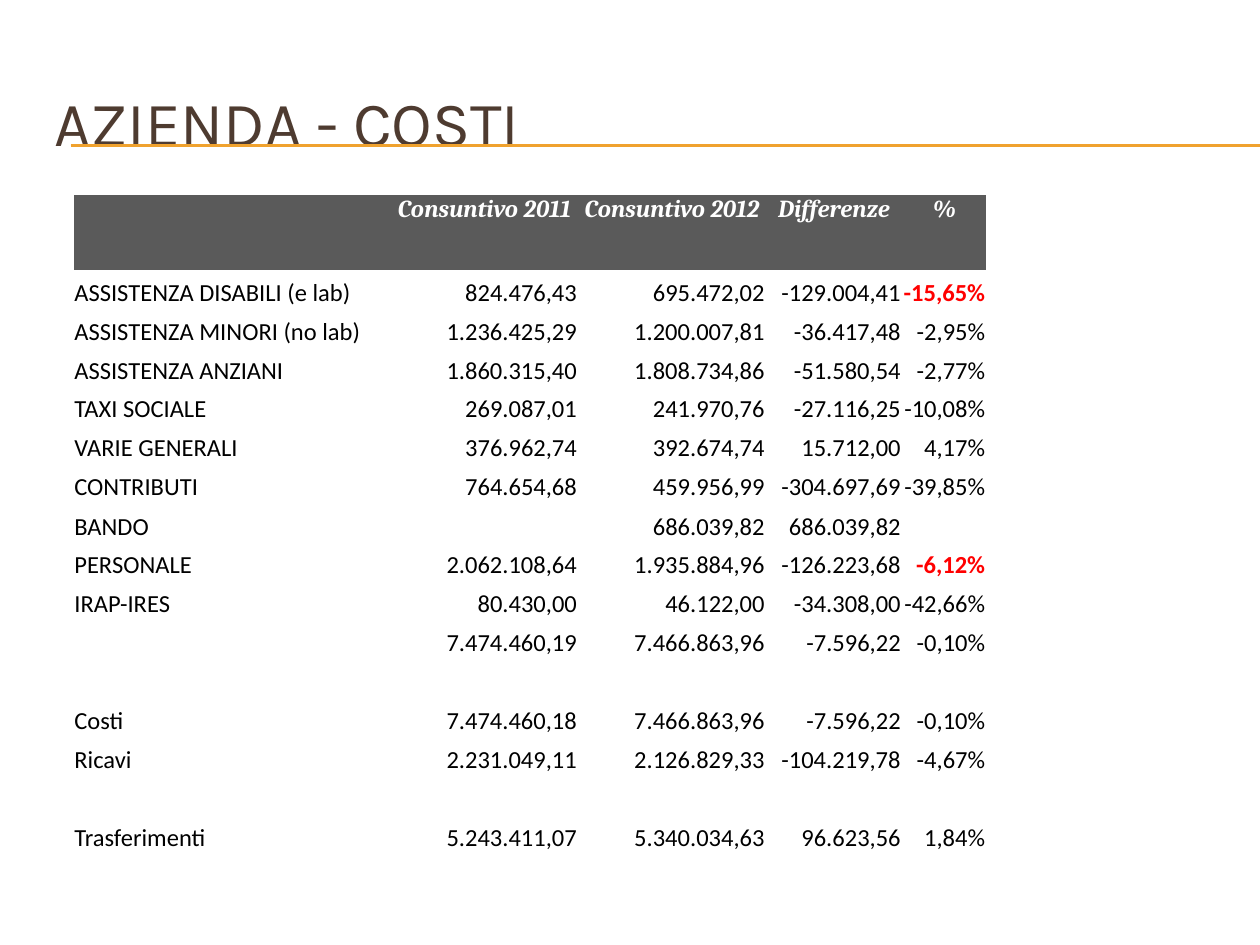
from lxml.etree import SubElement
from pptx import Presentation
from pptx.dml.color import RGBColor
from pptx.enum.shapes import MSO_CONNECTOR
from pptx.enum.text import MSO_ANCHOR as Anchor, PP_ALIGN as Align
from pptx.oxml.ns import qn
from pptx.util import Inches, Pt

BROWN = RGBColor(0x4E, 0x3B, 0x30)
ORANGE = RGBColor(0xF0, 0xA2, 0x2E)
GRAY = RGBColor(0x5A, 0x5A, 0x5A)
WHITE = RGBColor(0xFF, 0xFF, 0xFF)
BLACK = RGBColor(0, 0, 0)
RED = RGBColor(0xFF, 0, 0)

COLUMN_WIDTHS = [2.51, 1.49, 1.49, 1.08, 0.67]
TABLE_HEIGHT, HEADER_HEIGHT = 5.2, 0.59
HEADERS = ["", "Consuntivo 2011", "Consuntivo 2012", "Differenze", "%"]
COSTS = [
    ["ASSISTENZA DISABILI (e lab)", "824.476,43", "695.472,02", "-129.004,41", "-15,65%"],
    ["ASSISTENZA MINORI (no lab)", "1.236.425,29", "1.200.007,81", "-36.417,48", "-2,95%"],
    ["ASSISTENZA ANZIANI", "1.860.315,40", "1.808.734,86", "-51.580,54", "-2,77%"],
    ["TAXI SOCIALE", "269.087,01", "241.970,76", "-27.116,25", "-10,08%"],
    ["VARIE GENERALI", "376.962,74", "392.674,74", "15.712,00", "4,17%"],
    ["CONTRIBUTI", "764.654,68", "459.956,99", "-304.697,69", "-39,85%"],
    ["BANDO", "", "686.039,82", "686.039,82", ""],
    ["PERSONALE", "2.062.108,64", "1.935.884,96", "-126.223,68", "-6,12%"],
    ["IRAP-IRES", "80.430,00", "46.122,00", "-34.308,00", "-42,66%"],
    ["", "7.474.460,19", "7.466.863,96", "-7.596,22", "-0,10%"],
    [""] * 5,
    ["Costi", "7.474.460,18", "7.466.863,96", "-7.596,22", "-0,10%"],
    ["Ricavi", "2.231.049,11", "2.126.829,33", "-104.219,78", "-4,67%"],
    [""] * 5,
    ["Trasferimenti", "5.243.411,07", "5.340.034,63", "96.623,56", "1,84%"],
]
HIGHLIGHTS = {"-15,65%", "-6,12%"}


def write_text(frame, text, font="Calibri", size=14, color=BLACK,
               bold=False, italic=False, align=Align.LEFT):
    paragraph = frame.paragraphs[0]
    paragraph.alignment = align
    run = paragraph.add_run()
    run.text = text
    run.font.name = font
    run.font.size = Pt(size)
    run.font.color.rgb = color
    run.font.bold = bold
    run.font.italic = italic


def add_rule(slide, top, right):
    line = slide.shapes.add_connector(
        MSO_CONNECTOR.STRAIGHT, Inches(0.56), Inches(top), right, Inches(top))
    line.line.color.rgb = ORANGE
    line.line.width = Pt(0.75)
    SubElement(line._element.spPr, qn("a:effectLst"))


def add_title(slide, text):
    title = slide.shapes.title
    title.left, title.top = Inches(0.33), Inches(0.5)
    title.width, title.height = Inches(9.5), Inches(0.92)
    title.text_frame.vertical_anchor = Anchor.MIDDLE
    write_text(title.text_frame, text, font="Karla", size=36, color=BROWN)


def fill_cell(cell, text, is_header, is_label):
    inset = 0 if is_header or is_label else Inches(0.01)
    cell.margin_left = cell.margin_right = cell.margin_top = inset
    cell.margin_bottom = 0
    if is_header:
        cell.fill.solid()
        cell.fill.fore_color.rgb = GRAY
        style = dict(font="Cambria", color=WHITE, bold=True, italic=True, align=Align.CENTER)
    else:
        cell.fill.background()
        cell.vertical_anchor = Anchor.BOTTOM
        marked = text in HIGHLIGHTS
        style = dict(color=RED if marked else BLACK, bold=marked,
                     align=Align.LEFT if is_label else Align.RIGHT)
    if text:
        write_text(cell.text_frame, text, **style)


def add_cost_table(slide):
    rows = [HEADERS] + COSTS
    table = slide.shapes.add_table(
        len(rows), len(HEADERS), Inches(0.59), Inches(1.55),
        Inches(sum(COLUMN_WIDTHS)), Inches(TABLE_HEIGHT)).table
    table.horz_banding = False
    table.first_row = False
    for column, width in zip(table.columns, COLUMN_WIDTHS):
        column.width = Inches(width)
    row_height = (TABLE_HEIGHT - HEADER_HEIGHT) / len(COSTS)
    for r, values in enumerate(rows):
        table.rows[r].height = Inches(row_height if r else HEADER_HEIGHT)
        for c, text in enumerate(values):
            fill_cell(table.cell(r, c), text, is_header=r == 0, is_label=c == 0)
    # Plain grid without the default style's borders
    style_id = table._tbl.tblPr.find(qn("a:tableStyleId"))
    style_id.text = "{2D5ABB26-0587-4C30-8999-92F81FD0307C}"


def main():
    presentation = Presentation()
    presentation.slide_width, presentation.slide_height = Inches(10), Inches(7.5)
    slide = presentation.slides.add_slide(presentation.slide_layouts[5])
    # Double rule under the title
    for top in (1.15, 1.16):
        add_rule(slide, top, presentation.slide_width)
    add_title(slide, "AZIENDA - COSTI")
    add_cost_table(slide)
    presentation.save("out.pptx")


if __name__ == "__main__":
    main()
